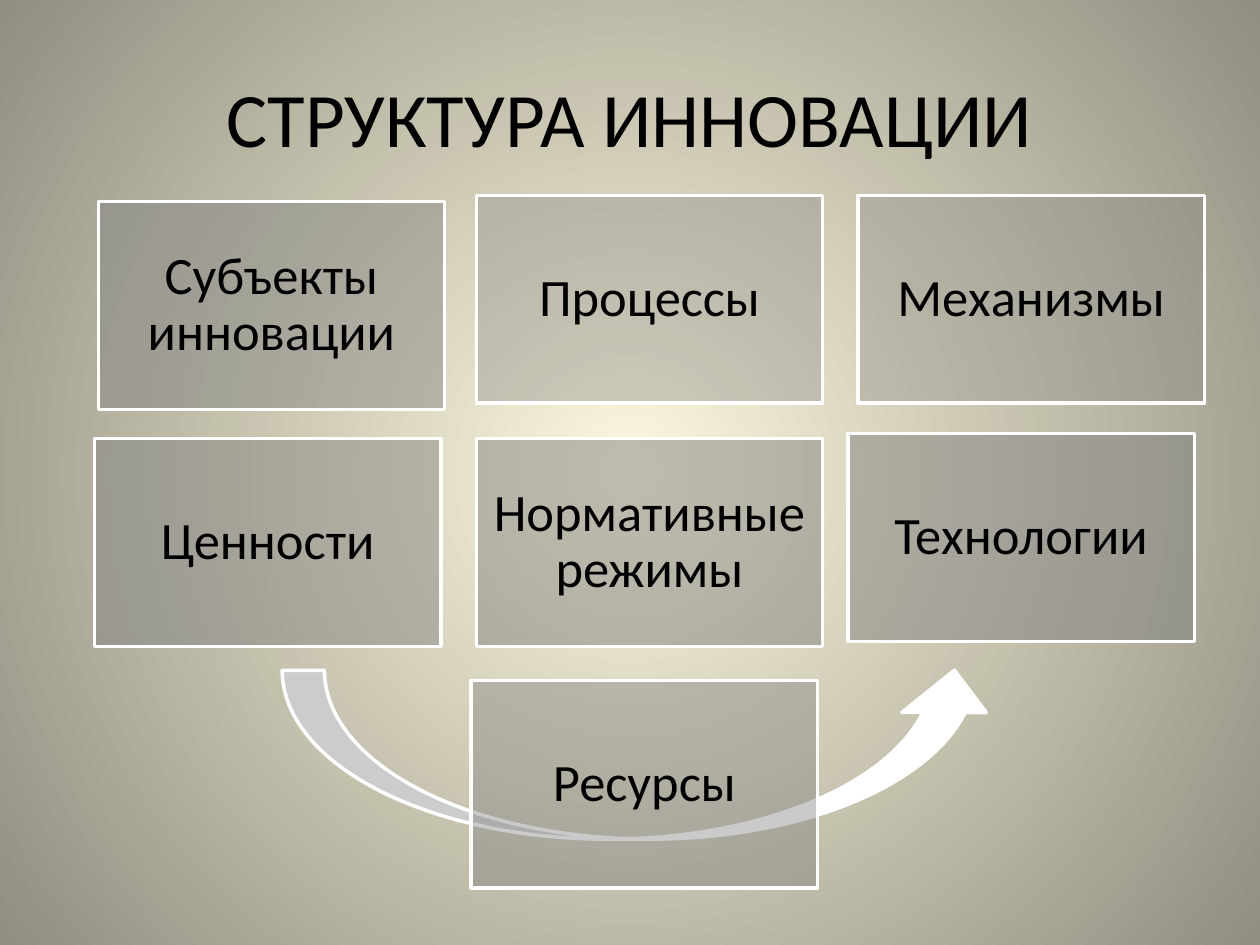
import pptx
import pptx.util
import pptx.dml.color
import pptx.enum.shapes
import pptx.enum.text
import pptx.oxml
import pptx.oxml.ns

Inches, Pt = pptx.util.Inches, pptx.util.Pt
RGB = pptx.dml.color.RGBColor
SHAPE = pptx.enum.shapes.MSO_SHAPE
qn = pptx.oxml.ns.qn

CREAM = RGB(0xFC, 0xF7, 0xDD)
OLIVE = RGB(0x91, 0x8E, 0x81)
WHITE = RGB(0xFF, 0xFF, 0xFF)
GRAY = RGB(0x80, 0x80, 0x80)
BLACK = RGB(0, 0, 0)

WIDE, HIGH = 2.75, 1.65
CARDS = [  # text, left, top, opacity in percent
    ("Субъекты инновации", 0.78, 1.6, 45),
    ("Процессы", 3.78, 1.55, 34),
    ("Механизмы", 6.81, 1.55, 31),
    ("Ценности", 0.75, 3.48, 46),
    ("Нормативные режимы", 3.78, 3.48, 49),
    ("Технологии", 6.73, 3.44, 49),
    ("Ресурсы", 3.74, 5.4, 41),
]
FRAME = {"word_wrap": True, "vertical_anchor": pptx.enum.text.MSO_ANCHOR.MIDDLE}
INSETS = {"margin_" + side: Inches(0.12) for side in ("left", "top", "right", "bottom")}
PARA = {"alignment": pptx.enum.text.PP_ALIGN.CENTER}


def write(shape, text, size, frame, para):
    box = shape.text_frame
    box.text = text
    line = box.paragraphs[0]
    font = {"name": "Calibri", "size": Pt(size)}
    for item, values in ((box, frame), (line, para), (line.runs[0].font, font)):
        for key, value in values.items():
            setattr(item, key, value)
    line.runs[0].font.color.rgb = BLACK


def draw(kind, left, top, width, height, color):
    """Add a flat shape with a white outline."""
    shape = slide.shapes.add_shape(
        kind, Inches(left), Inches(top), Inches(width), Inches(height))
    shape.shadow.inherit = False
    shape.fill.solid()
    shape.fill.fore_color.rgb = color
    shape.line.color.rgb = WHITE
    shape.line.width = Pt(2)
    return shape


deck = pptx.Presentation()
deck.slide_width, deck.slide_height = Inches(10), Inches(7.5)
slide = deck.slides.add_slide(deck.slide_layouts[5])

# Radial background, light in the centre
back = slide.background.fill
back.gradient()
for stop, place, color in zip(back.gradient_stops, (0, 1), (CREAM, OLIVE)):
    stop.position = place
    stop.color.rgb = color
grad = next(slide.element.iter(qn("a:gradFill")))
grad.remove(grad.find(qn("a:lin")))
grad.append(pptx.oxml.parse_xml(
    f'<a:path {pptx.oxml.ns.nsdecls("a")} path="circle">'
    '<a:fillToRect l="50000" t="50000" r="50000" b="50000"/></a:path>'))

title = slide.shapes.title
title.left, title.top = Inches(0.5), Inches(0.3)
title.width, title.height = Inches(9), Inches(1.25)
write(title, "СТРУКТУРА ИННОВАЦИИ", 44, FRAME, PARA)

draw(SHAPE.CURVED_UP_ARROW, 2.24, 5.32, 5.67, 1.34, WHITE)

for text, left, top, alpha in CARDS:
    card = draw(SHAPE.RECTANGLE, left, top, WIDE, HIGH, GRAY)
    tint = next(card.element.spPr.iter(qn("a:srgbClr")))
    tint.append(pptx.oxml.parse_xml(
        f'<a:alpha {pptx.oxml.ns.nsdecls("a")} val="{alpha * 1000}"/>'))
    write(card, text, 30, FRAME | INSETS, PARA | {"line_spacing": 0.9})

deck.save("out.pptx")
